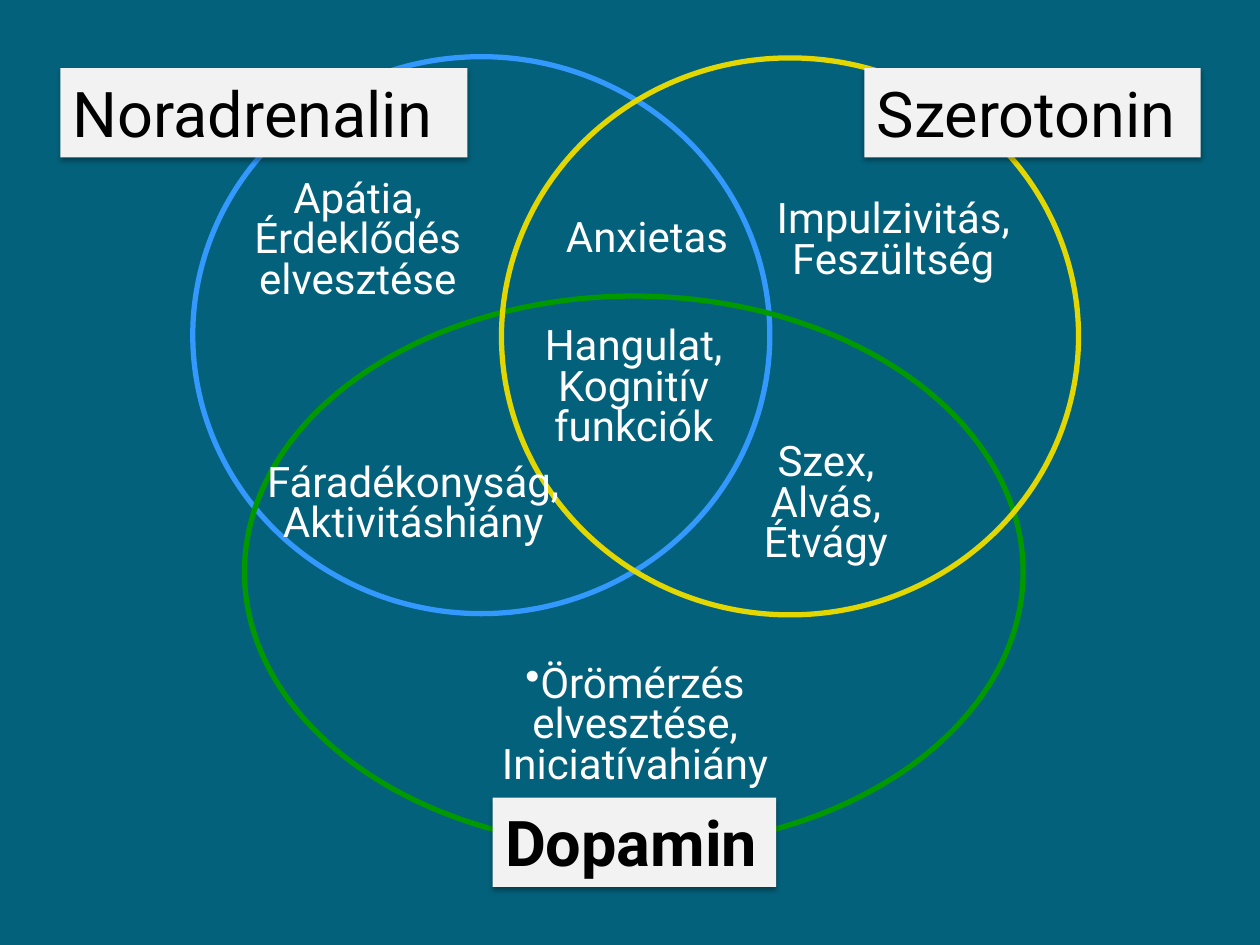
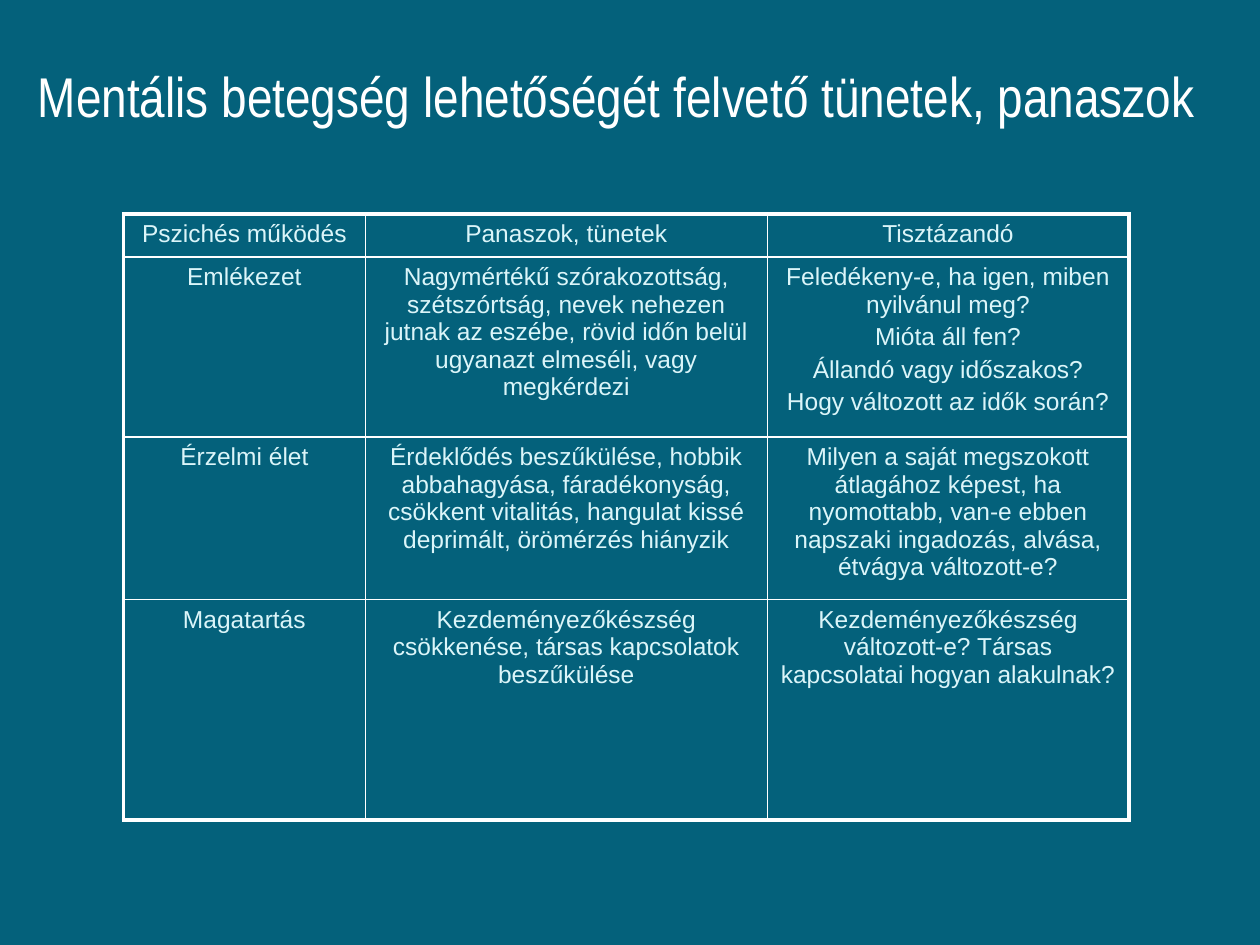
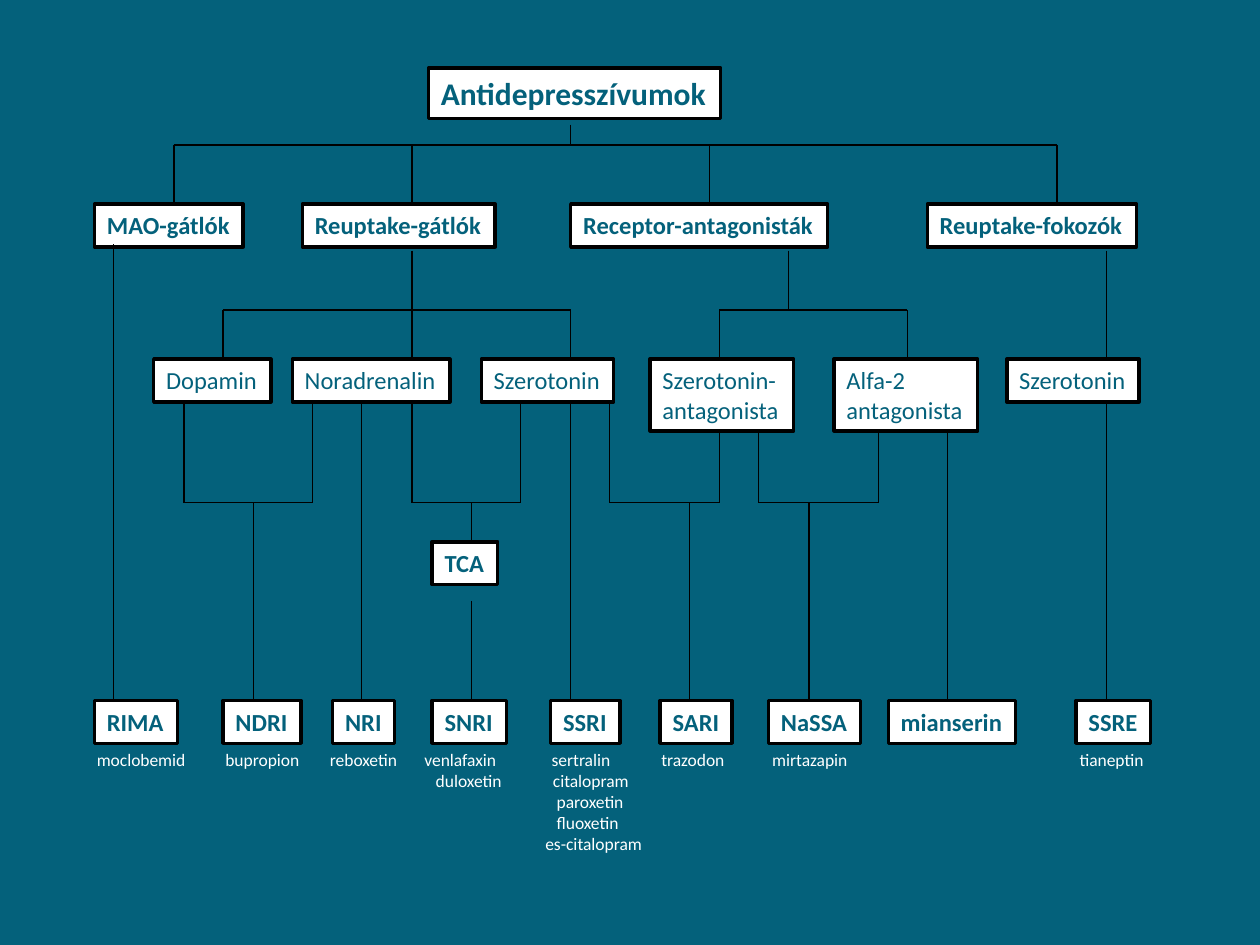
import pptx
import pptx.dml.color
import pptx.enum.shapes
import pptx.enum.text
import pptx.oxml
import pptx.oxml.ns
import pptx.util
from pptx.util import Inches

TEAL, WHITE, BLACK, PALE, GREY = "04617B", "FFFFFF", "000000", "DBF5F9", "F2F2F2"
NS = pptx.oxml.ns.nsdecls("a")
SHAPE = pptx.enum.shapes.MSO_SHAPE
ALIGN = pptx.enum.text.PP_ALIGN
ANCHOR = pptx.enum.text.MSO_ANCHOR
TITLE_ONLY, BLANK = 5, 6


def rgb(color):
    return pptx.dml.color.RGBColor.from_string(color)


def write(tf, text, font="Calibri", size=14, color=WHITE, bold=False, align=ALIGN.LEFT,
          spacing=None, before=0, wrap=True, anchor=ANCHOR.TOP, bullet=False, tabs=()):
    """Fill a text frame, one paragraph a line; tabs holds the tab stops of each line."""
    tf.word_wrap = wrap
    tf.vertical_anchor = anchor
    for i, line in enumerate(text.split("\n")):
        p = tf.paragraphs[0] if i == 0 else tf.add_paragraph()
        p.alignment = align
        if spacing:
            p.line_spacing = spacing
        if i and before:
            p.space_before = pptx.util.Pt(before)
        pPr = p._p.get_or_add_pPr()
        if bullet:
            pPr.set("marL", "0")
            pPr.set("indent", "0")
            pPr.append(pptx.oxml.parse_xml(f'<a:buChar {NS} char="•"/>'))
        if tabs:
            stops = "".join(f'<a:tab pos="{Inches(x)}" algn="l"/>' for x in tabs[i])
            pPr.append(pptx.oxml.parse_xml(f"<a:tabLst {NS}>{stops}</a:tabLst>"))
        r = p.add_run()
        r.text = line
        r.font.name, r.font.size, r.font.bold = font, pptx.util.Pt(size), bold
        r.font.color.rgb = rgb(color)


def add_shape(s, kind, x, y, w, h, fill=None, line=None, width=1):
    sp = s.shapes.add_shape(kind, Inches(x), Inches(y), Inches(w), Inches(h))
    sp.shadow.inherit = False
    if fill:
        sp.fill.solid()
        sp.fill.fore_color.rgb = rgb(fill)
    else:
        sp.fill.background()
    if line:
        sp.line.color.rgb = rgb(line)
        sp.line.width = pptx.util.Pt(width)
    else:
        sp.line.fill.background()
    return sp


def add_text(s, x, y, w, h, text, **fmt):
    sp = s.shapes.add_textbox(Inches(x), Inches(y), Inches(w), Inches(h))
    write(sp.text_frame, text, **fmt)


def add_line(s, x1, y1, x2, y2):
    c = s.shapes.add_connector(pptx.enum.shapes.MSO_CONNECTOR.STRAIGHT,
                               Inches(x1), Inches(y1), Inches(x2), Inches(y2))
    c.line.color.rgb = rgb(BLACK)
    c.line.width = pptx.util.Pt(0.75)
    c._element.spPr.append(pptx.oxml.parse_xml(f"<a:effectLst {NS}/>"))


def drop_shadow(sp):
    effects = sp._element.spPr.find(pptx.oxml.ns.qn("a:effectLst"))
    effects.append(pptx.oxml.parse_xml(
        f'<a:outerShdw {NS} blurRad="{pptx.util.Pt(3.1)}" dist="{pptx.util.Pt(1.8)}" '
        f'dir="5400000" rotWithShape="0"><a:srgbClr val="{BLACK}">'
        '<a:alpha val="35000"/></a:srgbClr></a:outerShdw>'))


def venn(s, left, top):
    circles = [(1.05, 0, 4.58, 4.42, "3399FF"), (1.46, 1.9, 6.18, 4.38, "009900"),
               (3.5, 0.01, 4.58, 4.42, "E2D700")]
    names = [(0, 0.09, 3.23, "Noradrenalin", False), (6.38, 0.09, 2.67, "Szerotonin", False),
             (3.43, 5.88, 2.25, "Dopamin", True)]
    symptoms = [
        (2.82, 4.79, 3.48, 1.07, "Örömérzés elvesztése, Iniciatívahiány", True),
        (3.37, 2.11, 2.36, 1.07, "Hangulat, Kognitív funkciók", False),
        (3.37, 1.25, 2.57, 0.43, "Anxietas", False),
        (5.21, 3.03, 1.73, 1.07, "Szex, Alvás, Étvágy", False),
        (1.46, 3.19, 2.68, 0.75, "Fáradékonyság, Aktivitáshiány", False),
        (5.43, 1.1, 2.36, 0.75, "Impulzivitás, Feszültség", False),
        (1.18, 0.94, 2.36, 1.07, "Apátia, Érdeklődés elvesztése", False),
    ]
    for x, y, w, h, color in circles:
        add_shape(s, SHAPE.OVAL, left + x, top + y, w, h, line=color, width=3)
    for x, y, w, name, bold in names:
        sp = add_shape(s, SHAPE.RECTANGLE, left + x, top + y, w, 0.71, fill=GREY)
        drop_shadow(sp)
        write(sp.text_frame, name, font="Roboto", size=36, color=BLACK, bold=bold)
    for x, y, w, h, text, bullet in symptoms:
        add_text(s, left + x, top + y, w, h, text, font="Roboto", size=24,
                 align=ALIGN.CENTER, spacing=0.8, bullet=bullet)


def title(s, x, y, w, h, text):
    sp = s.shapes.title
    sp.left, sp.top, sp.width, sp.height = map(Inches, (x, y, w, h))
    write(sp.text_frame, text, font="Arial Narrow", size=32, wrap=False)


def set_borders(cell, **widths):
    tcPr = cell._tc.get_or_add_tcPr()
    for side in "LRTB":
        tcPr.append(pptx.oxml.parse_xml(
            f'<a:ln{side} {NS} w="{pptx.util.Pt(widths[side])}"><a:solidFill>'
            f'<a:srgbClr val="{WHITE}"/></a:solidFill></a:ln{side}>'))


def symptom_table(s, x, y, w, h):
    col_widths = [1.92, 3.19, 2.87]
    row_heights = [0.34, 1.43, 1.29, 1.75]
    rows = [
        ("Pszichés működés", "Panaszok, tünetek", "Tisztázandó"),
        ("Emlékezet",
         "Nagymértékű szórakozottság, szétszórtság, nevek nehezen jutnak az eszébe, "
         "rövid időn belül ugyanazt elmeséli, vagy megkérdezi",
         "Feledékeny-e, ha igen, miben nyilvánul meg?\nMióta áll fen?\n"
         "Állandó vagy időszakos?\nHogy változott az idők során?"),
        ("Érzelmi élet",
         "Érdeklődés beszűkülése, hobbik abbahagyása, fáradékonyság, csökkent vitalitás, "
         "hangulat kissé deprimált, örömérzés hiányzik",
         "Milyen a saját megszokott átlagához képest, ha nyomottabb, van-e ebben "
         "napszaki ingadozás, alvása, étvágya változott-e?"),
        ("Magatartás",
         "Kezdeményezőkészség csökkenése, társas kapcsolatok beszűkülése",
         "Kezdeményezőkészség változott-e? Társas kapcsolatai hogyan alakulnak?"),
    ]
    inner, outer = 1, 2.25
    last_row, last_col = len(rows) - 1, len(col_widths) - 1
    table = s.shapes.add_table(len(rows), len(col_widths), Inches(x), Inches(y),
                               Inches(w), Inches(h)).table
    table.first_row = table.horz_banding = False
    for column, width in zip(table.columns, col_widths):
        column.width = Inches(width)
    for i, texts in enumerate(rows):
        table.rows[i].height = Inches(row_heights[i])
        for j, text in enumerate(texts):
            cell = table.cell(i, j)
            set_borders(cell, L=inner if j else outer, R=outer if j == last_col else inner,
                        T=inner if i else outer, B=outer if i == last_row else inner)
            cell.fill.background()
            write(cell.text_frame, text, font="Arial", color=PALE,
                  align=ALIGN.CENTER, before=2.8)


def drug_tree(s, left, top):
    def node(x, y, w, text, h=0.34, size=14, bold=True):
        sp = add_shape(s, SHAPE.RECTANGLE, left + x, top + y, w, h, WHITE, BLACK, 2)
        write(sp.text_frame, text, size=size, color=TEAL, bold=bold, wrap=False)

    groups = [(0, 1.18, "MAO-gátlók"), (1.65, 1.53, "Reuptake-gátlók"),
              (3.78, 2.04, "Receptor-antagonisták"), (6.61, 1.66, "Reuptake-fokozók")]
    targets = [(0.47, 0.93, "Dopamin"), (1.57, 1.25, "Noradrenalin"),
               (3.07, 1.05, "Szerotonin"), (4.41, 1.14, "Szerotonin-\nantagonista"),
               (5.87, 1.14, "Alfa-2\nantagonista"), (7.24, 1.05, "Szerotonin")]
    classes = [(0, 0.66, "RIMA"), (1.02, 0.62, "NDRI"), (1.89, 0.49, "NRI"),
               (2.68, 0.59, "SNRI"), (3.62, 0.55, "SSRI"), (4.49, 0.57, "SARI"),
               (5.35, 0.73, "NaSSA"), (6.3, 1.01, "mianserin"), (7.79, 0.59, "SSRE")]
    group_y, target_y, tca_y, class_y = 1.08, 2.31, 3.76, 5.02
    root_bar, target_bar, class_bar = 0.61, 1.92, 3.45
    below_group, below_target, below_tall = 1.45, 2.66, 2.89

    node(2.65, 0, 2.32, "Antidepresszívumok", h=0.4, size=18)
    for x, w, text in groups:
        node(x, group_y, w, text)
    for x, w, text in targets:
        node(x, target_y, w, text, h=0.57 if "\n" in text else 0.34, bold=False)
    node(2.68, tca_y, 0.52, "TCA")
    for x, w, text in classes:
        node(x, class_y, w, text)

    bars = {root_bar: [(0.63, 7.64)], target_bar: [(1.02, 3.78), (4.96, 6.45)],
            class_bar: [(0.71, 1.73), (2.52, 3.38), (4.09, 4.96), (5.27, 6.22)]}
    drops = {
        (0.45, root_bar): [3.78],
        (root_bar, group_y): [0.63, 2.52, 4.88, 7.64],
        (below_group, target_bar): [5.51],
        (below_group, target_y): [2.52, 8.03],
        (target_bar, target_y): [1.02, 3.78, 4.96, 6.45],
        (below_target, class_bar): [0.71, 1.73, 2.52, 3.38, 4.09],
        (below_tall, class_bar): [4.96, 5.27, 6.22],
        (below_target, class_y): [2.12, 3.78, 8.03],
        (below_tall, class_y): [6.77],
        (1.4, class_y): [0.15],
        (class_bar, class_y): [1.26, 4.72, 5.67],
        (class_bar, tca_y): [2.99],
        (4.23, class_y): [2.99],
    }
    for y, spans in bars.items():
        for x1, x2 in spans:
            add_line(s, left + x1, top + y, left + x2, top + y)
    for (y1, y2), xs in drops.items():
        for x in xs:
            add_line(s, left + x, top + y1, left + x, top + y2)

    drugs = ["moclobemid\tbupropion\treboxetin\tvenlafaxin\tsertralin\ttrazodon"
             "\tmirtazapin\ttianeptin",
             "\tduloxetin\tcitalopram", "\tparoxetin", "\tfluoxetin", "\tes-citalopram"]
    stops = [(1.02, 1.85, 2.6, 3.61, 4.48, 5.36, 7.8), (2.69, 3.62), (3.65,), (3.65,), (3.56,)]
    add_text(s, left - 0.08, top + 5.34, 8.57, 0.96, "\n".join(drugs), size=10,
             anchor=ANCHOR.MIDDLE, tabs=stops)


def main():
    prs = pptx.Presentation()
    prs.slide_width, prs.slide_height = Inches(10), Inches(7.5)
    fill = prs.slide_master.background.fill
    fill.solid()
    fill.fore_color.rgb = rgb(TEAL)

    venn(prs.slides.add_slide(prs.slide_layouts[BLANK]), 0.48, 0.45)

    s = prs.slides.add_slide(prs.slide_layouts[TITLE_ONLY])
    title(s, 0.2, 0.44, 9.48, 0.64, "Mentális betegség lehetőségét felvető tünetek, panaszok")
    symptom_table(s, 0.98, 1.7, 7.98, 4.8)

    drug_tree(prs.slides.add_slide(prs.slide_layouts[BLANK]), 0.75, 0.54)
    prs.save("out.pptx")


if __name__ == "__main__":
    main()
